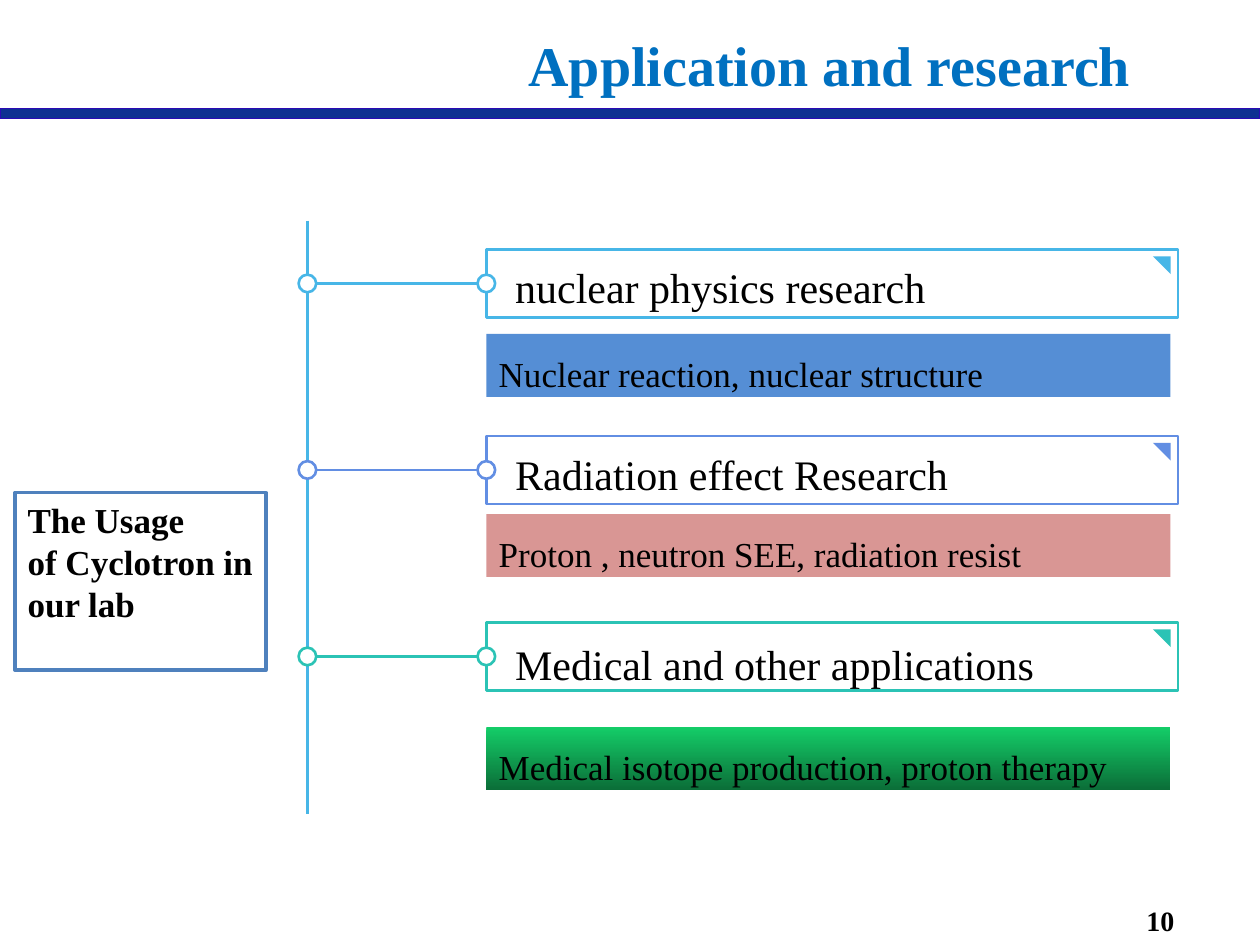
from dataclasses import dataclass

import pptx
import pptx.dml.color
import pptx.enum.shapes
import pptx.enum.text
import pptx.oxml
import pptx.util

SHAPE = pptx.enum.shapes.MSO_SHAPE
ALIGN = pptx.enum.text.PP_ALIGN
ANCHOR = pptx.enum.text.MSO_ANCHOR

# Grid: 100 columns by 75 rows of square cells
COLUMNS, ROWS, CELL = 100, 75, 0.1
FONT = "Times New Roman"
SPINE_COLUMN = 24.4
CARD_COLUMN, CARD_WIDTH, CARD_HEIGHT = 38.6, 54.9, 5.4
FIRST_CARD_ROW, BRANCH_STEP = 19.8, 14.8
DETAIL_WIDTH, DETAIL_HEIGHT = 54.3, 5
NODE = 1.4


@dataclass
class Branch:
    topic: str
    accent: str
    topic_offset: float
    detail: str
    detail_row: float
    detail_fill: tuple[str, ...]


BRANCHES = [
    Branch("nuclear physics research", "47B6E7", -0.7,
           "Nuclear reaction, nuclear structure", 26.5, ("558ED5",)),
    Branch("Radiation effect Research", "628EE3", -0.7,
           "Proton , neutron SEE, radiation resist", 40.8, ("D99694",)),
    Branch("Medical and other applications", "2BC3B5", -0.4,
           "Medical isotope production, proton therapy", 57.7, ("14CD68", "0B6E38")),
]


def cells(count: float) -> int:
    return pptx.util.Inches(count * CELL)


def color(hex_code: str) -> pptx.dml.color.RGBColor:
    return pptx.dml.color.RGBColor.from_string(hex_code)


def write(holder, *lines: str, size: float, bold: bool = False, ink: str = "000000",
          align=ALIGN.LEFT, spacing: float = 1.0, anchor=ANCHOR.TOP) -> None:
    """Fill a shape with one paragraph per line."""
    frame = holder.text_frame
    frame.word_wrap = True
    frame.vertical_anchor = anchor
    frame.text = "\n".join(lines)
    for paragraph in frame.paragraphs:
        paragraph.alignment = align
        paragraph.line_spacing = spacing
        font = paragraph.runs[0].font
        font.name, font.size, font.bold = FONT, pptx.util.Pt(size), bold
        font.color.rgb = color(ink)


def draw_shape(shapes, kind, column: float, row: float, width: float, height: float,
               fill: tuple[str, ...] = ("FFFFFF",), outline: str = "", weight: float = 1.5):
    shape = shapes.add_shape(kind, cells(column), cells(row), cells(width), cells(height))
    shape.shadow.inherit = False
    if len(fill) == 1:
        shape.fill.solid()
        shape.fill.fore_color.rgb = color(fill[0])
    else:
        shape.fill.gradient()
        shape.fill.gradient_angle = 270
        for stop, position, shade in zip(shape.fill.gradient_stops, (0, 1), fill):
            stop.position = position
            stop.color.rgb = color(shade)
    if outline:
        shape.line.color.rgb = color(outline)
        shape.line.width = pptx.util.Pt(weight)
    else:
        shape.line.fill.background()
    return shape


def draw_line(shapes, start: tuple[float, float], end: tuple[float, float], ink: str):
    line = shapes.add_connector(pptx.enum.shapes.MSO_CONNECTOR.STRAIGHT,
                                *(cells(value) for value in start + end))
    line.line.color.rgb = color(ink)
    line.line.width = pptx.util.Pt(1.5)
    line._element.spPr.append(pptx.oxml.parse_xml(
        '<a:effectLst xmlns:a="http://schemas.openxmlformats.org/drawingml/2006/main"/>'))
    return line


def draw_text(shapes, column: float, row: float, width: float, height: float,
              text: str, **style) -> None:
    box = shapes.add_textbox(cells(column), cells(row), cells(width), cells(height))
    write(box, text, **style)


def draw_branch(slide, branch: Branch, row: float) -> None:
    middle = row + CARD_HEIGHT / 2
    shapes = slide.shapes.add_group_shape().shapes

    # Card with its corner mark
    card = draw_shape(shapes, SHAPE.RECTANGLE, CARD_COLUMN, row, CARD_WIDTH, CARD_HEIGHT,
                      outline=branch.accent)
    corner = draw_shape(shapes, SHAPE.RIGHT_TRIANGLE, 91.5, row + 0.55, NODE, NODE,
                        fill=(branch.accent,))
    corner.rotation = 180

    # Link from the card to the spine, with a node at each end
    link = draw_line(shapes, (CARD_COLUMN, middle), (SPINE_COLUMN - NODE / 2, middle),
                     branch.accent)
    link.begin_connect(card, 1)
    for column in (SPINE_COLUMN, CARD_COLUMN):
        draw_shape(shapes, SHAPE.OVAL, column - NODE / 2, middle - NODE / 2, NODE, NODE,
                   outline=branch.accent)

    draw_text(shapes, CARD_COLUMN + 1.3, row + branch.topic_offset, CARD_WIDTH, CARD_HEIGHT,
              branch.topic, size=24, spacing=1.3)

    # Detail bar below the card
    detail = draw_shape(slide.shapes, SHAPE.RECTANGLE, CARD_COLUMN, branch.detail_row,
                        DETAIL_WIDTH, DETAIL_HEIGHT, fill=branch.detail_fill)
    write(detail, branch.detail, size=20, spacing=1.3)


def main() -> None:
    deck = pptx.Presentation()
    deck.slide_width, deck.slide_height = cells(COLUMNS), cells(ROWS)
    slide = deck.slides.add_slide(deck.slide_layouts[5])

    # Title and the rule below it
    title = slide.shapes.title
    title.left, title.top, title.width, title.height = map(cells, (30.3, 1.6, 71.1, 8.6))
    write(title, "Application and research", size=32, bold=True, ink="0070C0",
          align=ALIGN.CENTER)
    title.text_frame.margin_top = cells(0.8)
    draw_shape(slide.shapes, SHAPE.RECTANGLE, 0, 8.6, COLUMNS, 0.8,
               fill=("0E3092",), outline="2B0BB5", weight=0.75)

    # Root of the tree
    usage = draw_shape(slide.shapes, SHAPE.RECTANGLE, 1.2, 3.91 / CELL, 19.9, 14.1,
                       outline="4F81BD", weight=2)
    write(usage, "The Usage", "of Cyclotron in our lab", size=20, bold=True)
    usage.text_frame.margin_right = cells(0.5)

    # Spine and its branches
    draw_line(slide.shapes, (SPINE_COLUMN, 17.5), (SPINE_COLUMN, 64.6), BRANCHES[0].accent)
    for index, branch in enumerate(BRANCHES):
        draw_branch(slide, branch, FIRST_CARD_ROW + index * BRANCH_STEP)

    # Page number
    draw_text(slide.shapes, 80.3, 69.9, 23.6, 4.6, "10", size=16, bold=True,
              align=ALIGN.CENTER, spacing=1.5)
    deck.save("out.pptx")


if __name__ == "__main__":
    main()
